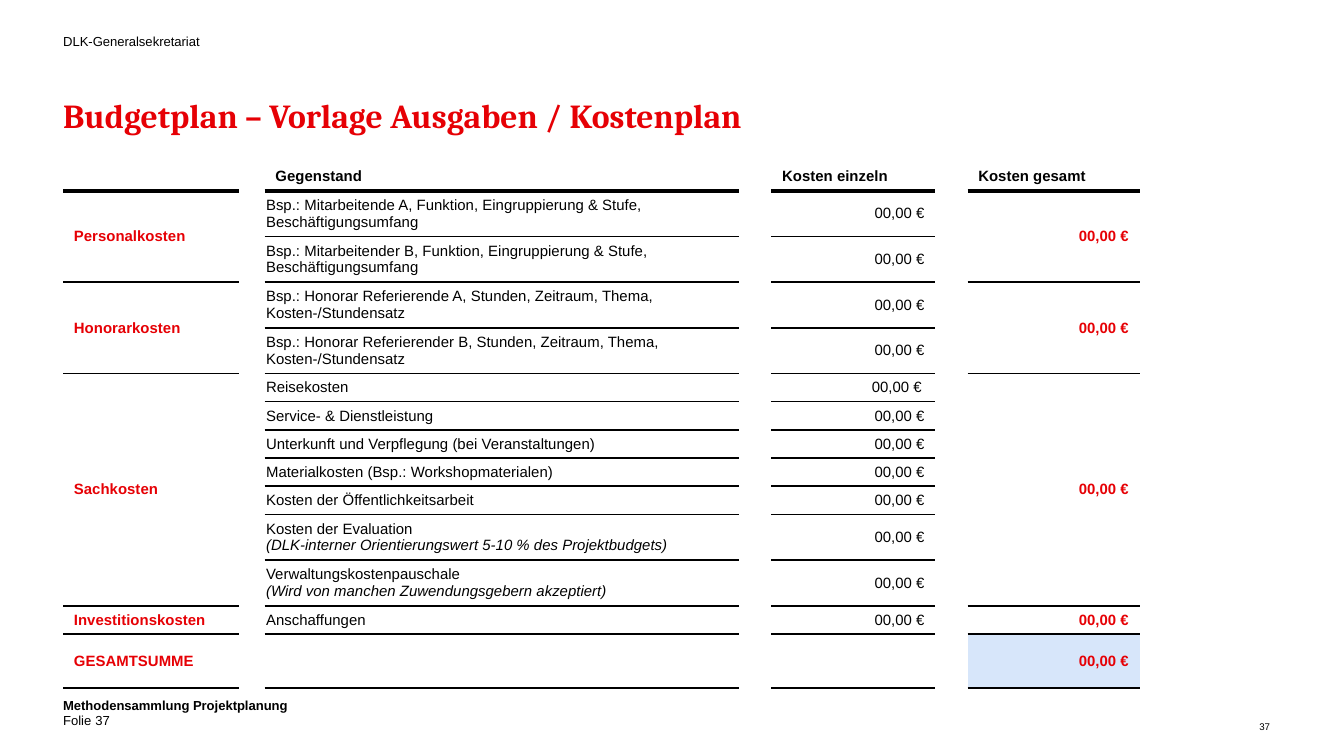
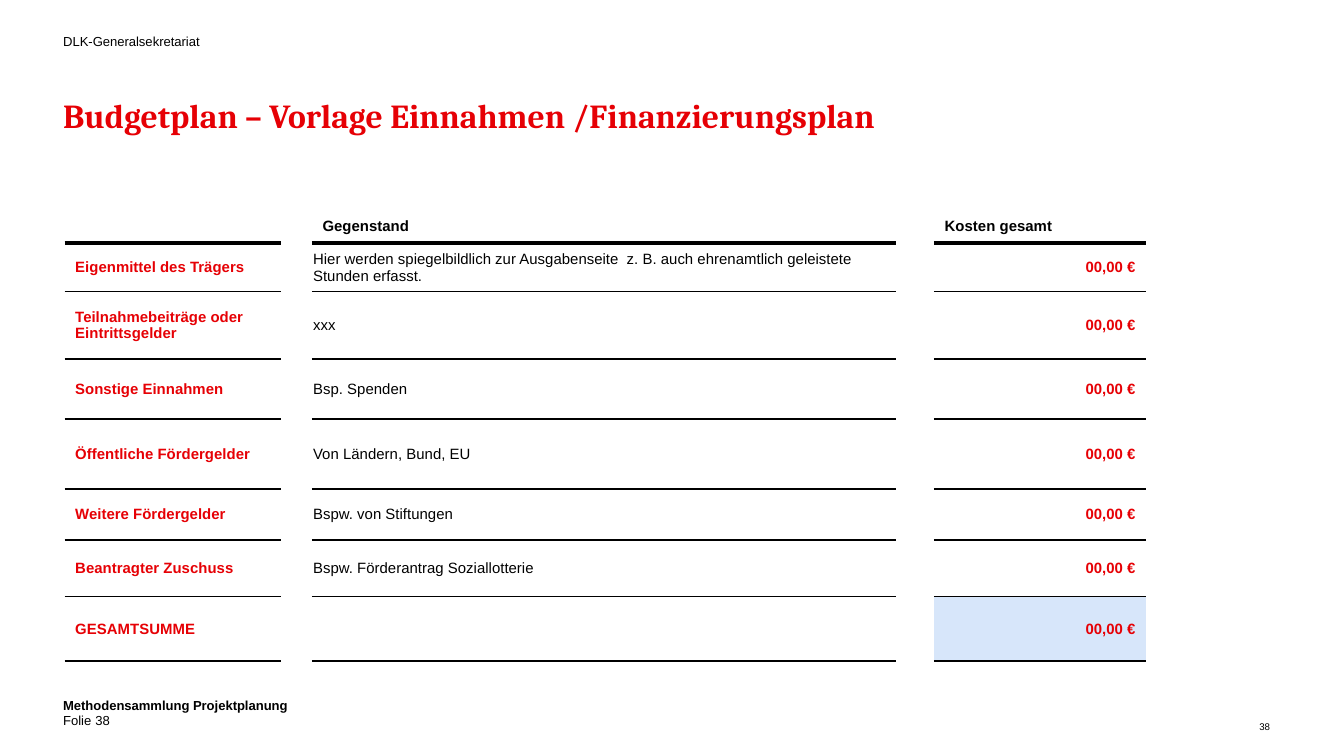
from dataclasses import dataclass

from lxml.etree import SubElement
from pptx import Presentation
from pptx.dml.color import RGBColor
from pptx.enum.text import MSO_ANCHOR, MSO_AUTO_SIZE, PP_ALIGN
from pptx.oxml.ns import qn
from pptx.util import Inches, Pt

HEX = {"red": "E60005", "black": "000000", "blue": "D7E6FA"}
SANS, SERIF = "Arial", "Cambria"
SUM = "00,00 €"
THICK, THIN = 2.25, 1


@dataclass
class Note:
    text: str
    left: float
    top: float
    width: float
    height: float
    size: float = 7
    bold: bool = False
    low: bool = False


@dataclass
class Item:
    high: float
    lines: tuple[str, ...]
    pad: float = 0.08


@dataclass
class Group:
    label: str
    items: list[Item]
    after: float = 0


@dataclass
class Plan:
    title: str
    page: int
    left: float
    top: float
    cols: list[float]
    heads: list[str]
    head: float
    foot: float
    groups: list[Group]


# Text helpers
def add_run(par, text: str, size: float, color: str = "black",
            bold: bool = False, slant: bool = False, face: str = SANS) -> None:
    run = par.add_run()
    run.text = text
    font = run.font
    font.name, font.size = face, Pt(size)
    font.bold, font.italic = bold, slant
    font.color.rgb = RGBColor.from_string(HEX[color])


def set_frame(frame, low: bool = False) -> None:
    frame.margin_left = frame.margin_right = 0
    frame.margin_top = frame.margin_bottom = 0
    frame.word_wrap = True
    frame.auto_size = MSO_AUTO_SIZE.NONE
    frame.vertical_anchor = MSO_ANCHOR.BOTTOM if low else MSO_ANCHOR.TOP


def add_note(slide, note: Note) -> None:
    box = slide.shapes.add_textbox(Inches(note.left), Inches(note.top),
                                   Inches(note.width), Inches(note.height))
    set_frame(box.text_frame, note.low)
    par = box.text_frame.paragraphs[0]
    par.line_spacing = Pt(9)
    add_run(par, note.text, note.size, bold=note.bold)


# Title, header and footer
def add_base(deck, plan: Plan):
    slide = deck.slides.add_slide(deck.slide_layouts[5])
    title = slide.shapes.title
    title.left, title.top = Inches(0.47), Inches(0.67)
    title.width, title.height = Inches(8.06), Inches(0.29)
    set_frame(title.text_frame)
    par = title.text_frame.paragraphs[0]
    par.alignment, par.line_spacing = PP_ALIGN.LEFT, Pt(24)
    add_run(par, plan.title, 18, "red", bold=True, face=SERIF)
    page = str(plan.page)
    for note in (
        Note("DLK-Generalsekretariat", 0.47, 0.24, 1.79, 0.12),
        Note("Methodensammlung Projektplanung", 0.47, 5.18, 9.06, 0.09, bold=True),
        Note("Folie", 0.47, 5.29, 0.3, 0.13, low=True),
        Note(page, 0.71, 5.3, 2.25, 0.12, low=True),
        Note(page, 9.37, 5.33, 0.42, 0.12, size=5.2, low=True),
    ):
        add_note(slide, note)
    return slide


# Table cells
def set_edges(cell, top: float, base: float) -> None:
    props = cell._tc.get_or_add_tcPr()
    for tag, width in (("lnL", 0), ("lnR", 0), ("lnT", top), ("lnB", base)):
        line = SubElement(props, qn(f"a:{tag}"), w=str(Pt(width)))
        if width:
            fill = SubElement(line, qn("a:solidFill"))
            SubElement(fill, qn("a:srgbClr"), val=HEX["black"])
        else:
            SubElement(line, qn("a:noFill"))


def fill_cell(cell, lines: tuple[str, ...], color: str = "black", bold: bool = False,
              right: bool = False, pad: float = 0.08, after: float = 0) -> None:
    cell.margin_left = cell.margin_right = Inches(pad)
    frame = cell.text_frame
    for num, text in enumerate(lines):
        par = frame.add_paragraph() if num else frame.paragraphs[0]
        par.alignment = PP_ALIGN.RIGHT if right else PP_ALIGN.LEFT
        if after:
            par.space_after = Pt(after)
        add_run(par, text, 8, color, bold, slant=num > 0)


def dress_grid(table) -> None:
    last = len(table.rows) - 1
    for r in range(last + 1):
        for c in range(len(table.columns)):
            cell = table.cell(r, c)
            ruled = c % 2 == 0 and not cell.is_spanned
            top = (0, THICK)[r] if r < 2 else THIN
            base = THIN if r else THICK
            set_edges(cell, top if ruled else 0, base if ruled else 0)
            cell.margin_top = cell.margin_bottom = Inches(0.03)
            cell.vertical_anchor = MSO_ANCHOR.MIDDLE
            cell.fill.background()
            par = cell.text_frame.paragraphs[0]
            if not par.runs:
                cell.margin_left = cell.margin_right = 0
                SubElement(par._p, qn("a:endParaRPr"), sz="800")
    total = table.cell(last, len(table.columns) - 1)
    total.fill.solid()
    total.fill.fore_color.rgb = RGBColor.from_string(HEX["blue"])


def add_grid(slide, plan: Plan) -> None:
    items = [item for group in plan.groups for item in group.items]
    highs = [plan.head, *(item.high for item in items), plan.foot]
    end = len(plan.cols) - 1
    table = slide.shapes.add_table(
        len(highs), len(plan.cols), Inches(plan.left), Inches(plan.top),
        Inches(sum(plan.cols)), Inches(sum(highs))).table
    table.first_row = table.horz_banding = False
    for col, width in zip(table.columns, plan.cols):
        col.width = Inches(width)
    for row, high in zip(table.rows, highs):
        row.height = Inches(high)

    # Heads stand over every second column, after the labels
    for num, text in enumerate(plan.heads, 1):
        fill_cell(table.cell(0, 2 * num), (text,), bold=True)

    # Groups: label and total span their items
    row = 1
    for group in plan.groups:
        stop = row + len(group.items) - 1
        if stop > row:
            for col in (0, end):
                table.cell(row, col).merge(table.cell(stop, col))
        fill_cell(table.cell(row, 0), (group.label,), "red", True, after=group.after)
        fill_cell(table.cell(row, end), (SUM,), "red", True, right=True)
        for item in group.items:
            fill_cell(table.cell(row, 2), item.lines, pad=0.01)
            if end > 4:
                fill_cell(table.cell(row, 4), (SUM,), right=True, pad=item.pad)
            row += 1

    # Sum row
    fill_cell(table.cell(row, 0), ("GESAMTSUMME",), "red", True)
    fill_cell(table.cell(row, end), (SUM,), "red", True, right=True)
    dress_grid(table)


# Content
ONE, TWO = 0.21, 0.34
COSTS = Plan(
    "Budgetplan – Vorlage Ausgaben / Kostenplan", 37, 0.47, 1.21,
    [1.31, 0.19, 3.53, 0.24, 1.22, 0.24, 1.28],
    ["Gegenstand", "Kosten einzeln", "Kosten gesamt"], ONE, 0.4,
    [
        Group("Personalkosten", [
            Item(TWO, ("Bsp.: Mitarbeitende A, Funktion, Eingruppierung & Stufe, "
                       "Beschäftigungsumfang",)),
            Item(TWO, ("Bsp.: Mitarbeitender B, Funktion, Eingruppierung & Stufe, "
                       "Beschäftigungsumfang",)),
        ]),
        Group("Honorarkosten", [
            Item(TWO, ("Bsp.: Honorar Referierende A, Stunden, Zeitraum, Thema, "
                       "Kosten-/Stundensatz",)),
            Item(TWO, ("Bsp.: Honorar Referierender B, Stunden, Zeitraum, Thema, "
                       "Kosten-/Stundensatz",)),
        ]),
        Group("Sachkosten", [
            Item(ONE, ("Reisekosten",), pad=0.1),
            Item(ONE, ("Service- & Dienstleistung",)),
            Item(ONE, ("Unterkunft und Verpflegung (bei Veranstaltungen)",)),
            Item(ONE, ("Materialkosten (Bsp.: Workshopmaterialen)",)),
            Item(ONE, ("Kosten der Öffentlichkeitsarbeit",)),
            Item(TWO, ("Kosten der Evaluation",
                       "(DLK-interner Orientierungswert 5-10 % des Projektbudgets)")),
            Item(TWO, ("Verwaltungskostenpauschale",
                       "(Wird von manchen Zuwendungsgebern akzeptiert)")),
        ]),
        Group("Investitionskosten", [Item(ONE, ("Anschaffungen",))]),
    ])

FUNDS = Plan(
    "Budgetplan – Vorlage Einnahmen /Finanzierungsplan", 38, 0.48, 1.55,
    [1.61, 0.23, 4.35, 0.28, 1.58],
    ["Gegenstand", "Kosten gesamt"], 0.26, 0.48,
    [Group(label, [Item(high, (text,))], after=6) for label, high, text in (
        ("Eigenmittel des Trägers", 0.36,
         "Hier werden spiegelbildlich zur Ausgabenseite  z. B. auch ehrenamtlich "
         "geleistete Stunden erfasst."),
        ("Teilnahmebeiträge oder Eintrittsgelder", 0.5, "xxx"),
        ("Sonstige Einnahmen", 0.45, "Bsp. Spenden"),
        ("Öffentliche Fördergelder", 0.52, "Von Ländern, Bund, EU"),
        ("Weitere Fördergelder", 0.38, "Bspw. von Stiftungen"),
        ("Beantragter Zuschuss", 0.42, "Bspw. Förderantrag Soziallotterie"),
    )])


def main() -> None:
    deck = Presentation()
    deck.slide_width = Inches(10)
    deck.slide_height = deck.slide_width * 9 // 16
    for plan in (COSTS, FUNDS):
        add_grid(add_base(deck, plan), plan)
    deck.save("out.pptx")


if __name__ == "__main__":
    main()
